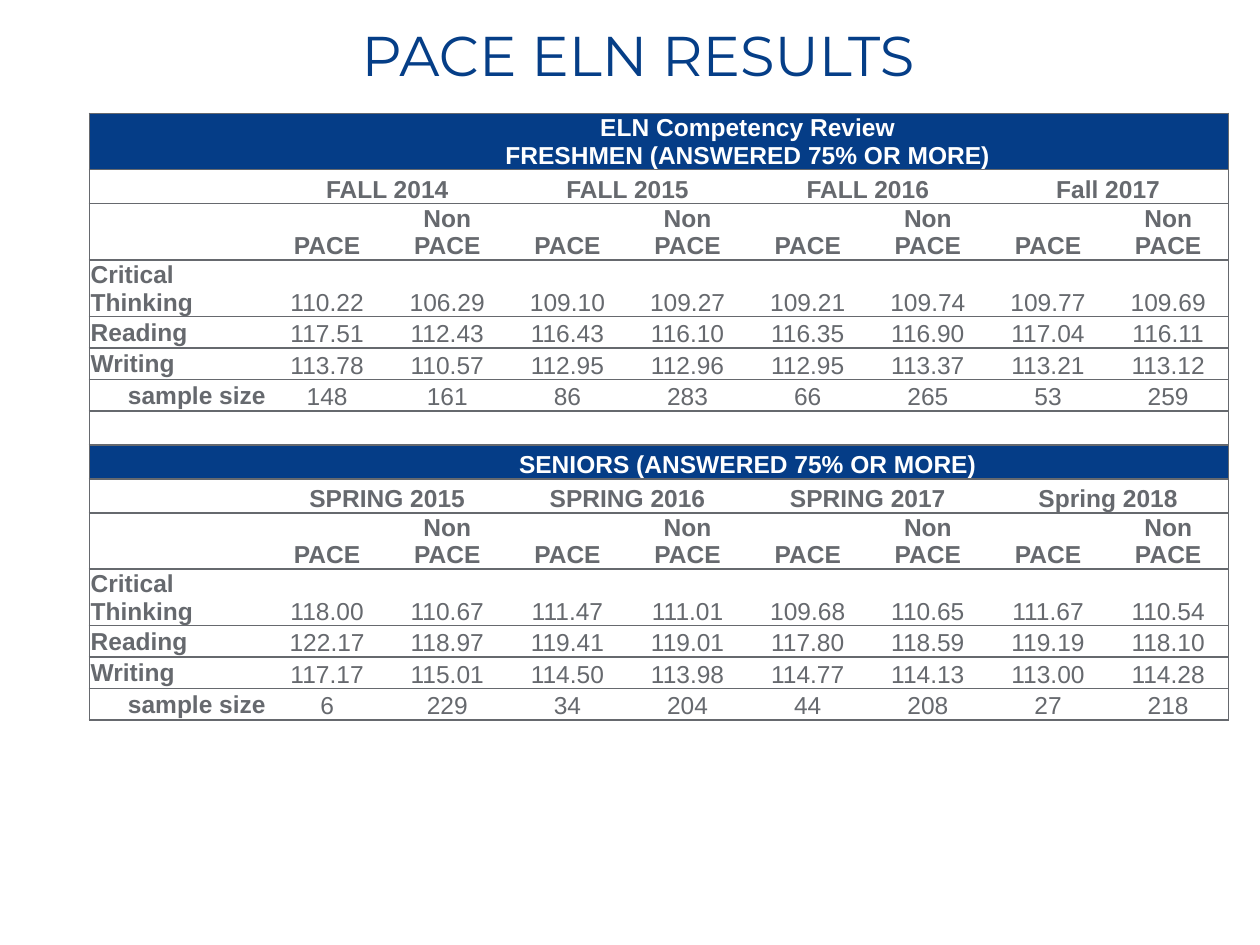
from dataclasses import dataclass
from typing import Optional

from lxml.etree import SubElement
from pptx import Presentation
from pptx.dml.color import RGBColor
from pptx.enum.text import MSO_ANCHOR as Anchor, PP_ALIGN as Align
from pptx.oxml.ns import qn
from pptx.util import Inches, Pt

NAVY = RGBColor(0x05, 0x3D, 0x87)
TITLE_BLUE = RGBColor(0x05, 0x3E, 0x87)
GREY = RGBColor(0x66, 0x69, 0x6E)
WHITE = RGBColor(0xFF, 0xFF, 0xFF)

LEFT, TOP, WIDTH, HEIGHT = 0.71, 0.9, 9.04, 4.94
LABEL_WIDTH = 1.41
VALUE_COLUMNS = 8
COLUMNS = VALUE_COLUMNS + 1
HEADER_HEIGHT, SCORE_HEIGHT = 0.27, 0.25
TEXT_SIZE = Pt(14)
MARGINS = {"margin_left": 0.01, "margin_right": 0.01, "margin_top": 0.01, "margin_bottom": 0}


@dataclass
class CellStyle:
    color: RGBColor = GREY
    fill: RGBColor = WHITE
    bold: bool = True
    align: Align = Align.CENTER
    anchor: Anchor = Anchor.BOTTOM


@dataclass
class Row:
    texts: list[str]
    style: CellStyle
    label: str = ""
    label_style: Optional[CellStyle] = None
    height: float = HEADER_HEIGHT


@dataclass
class Cohort:
    heading: str
    terms: list[str]
    scores: dict[str, str]


HEADING = CellStyle(color=WHITE, fill=NAVY)
SUBHEADING = CellStyle()
SCORE = CellStyle(bold=False)
SKILL = CellStyle(align=Align.LEFT, anchor=Anchor.MIDDLE)
SAMPLE = CellStyle(align=Align.RIGHT, anchor=Anchor.MIDDLE)

COHORTS = [
    Cohort(
        "ELN Competency Review\nFRESHMEN (ANSWERED 75% OR MORE)",
        ["FALL 2014", "FALL 2015", "FALL 2016", "Fall 2017"],
        {
            "Critical Thinking": "110.22 106.29 109.10 109.27 109.21 109.74 109.77 109.69",
            "Reading": "117.51 112.43 116.43 116.10 116.35 116.90 117.04 116.11",
            "Writing": "113.78 110.57 112.95 112.96 112.95 113.37 113.21 113.12",
            "sample size": "148 161 86 283 66 265 53 259",
        },
    ),
    Cohort(
        "SENIORS (ANSWERED 75% OR MORE)",
        ["SPRING 2015", "SPRING 2016", "SPRING 2017", "Spring 2018"],
        {
            "Critical Thinking": "118.00 110.67 111.47 111.01 109.68 110.65 111.67 110.54",
            "Reading": "122.17 118.97 119.41 119.01 117.80 118.59 119.19 118.10",
            "Writing": "117.17 115.01 114.50 113.98 114.77 114.13 113.00 114.28",
            "sample size": "6 229 34 204 44 208 27 218",
        },
    ),
]


def cohort_rows(cohort: Cohort) -> list[Row]:
    rows = [
        Row([cohort.heading], HEADING),
        Row(cohort.terms, SUBHEADING),
        Row(["PACE", "Non PACE"] * len(cohort.terms), SUBHEADING),
    ]
    for label, scores in cohort.scores.items():
        label_style = SAMPLE if label == "sample size" else SKILL
        rows.append(Row(scores.split(), SCORE, label, label_style, SCORE_HEIGHT))
    return rows


def set_borders(cell, visible: dict[str, bool]) -> None:
    properties = cell._tc.get_or_add_tcPr()
    for side, shown in visible.items():
        line = SubElement(properties, qn(f"a:ln{side}"), w=str(Pt(1)))
        if shown:
            fill = SubElement(line, qn("a:solidFill"))
            SubElement(fill, qn("a:srgbClr"), val=str(GREY))
        else:
            SubElement(line, qn("a:noFill"))


def format_cell(cell, column: int, width: int, style: CellStyle, text: str = "") -> None:
    set_borders(cell, {"L": column == 0, "R": column + width == COLUMNS, "T": True, "B": True})
    cell.fill.solid()
    cell.fill.fore_color.rgb = style.fill
    cell.vertical_anchor = style.anchor
    for name, inches in MARGINS.items():
        setattr(cell, name, Inches(inches))
    cell.text = text
    for para in cell.text_frame.paragraphs:
        para.alignment = style.align
        for span in para.runs:
            for name, value in {"name": "Arial", "size": TEXT_SIZE, "bold": style.bold}.items():
                setattr(span.font, name, value)
            span.font.color.rgb = style.color
        if not para.runs:  # keeps empty cells from stretching their row
            SubElement(para._p, qn("a:endParaRPr"), sz=str(int(TEXT_SIZE.pt * 100)))


def fill_row(table, index: int, row: Row) -> None:
    table.rows[index].height = Inches(row.height)
    format_cell(table.cell(index, 0), 0, 1, row.label_style or row.style, row.label)
    width = VALUE_COLUMNS // len(row.texts)
    for position, text in enumerate(row.texts):
        first = 1 + position * width
        cell = table.cell(index, first)
        format_cell(cell, first, width, row.style, text)
        for column in range(first + 1, first + width):
            format_cell(table.cell(index, column), column, 1, row.style)
        if width > 1:
            cell.merge(table.cell(index, first + width - 1))


def add_results(page, rows: list[Row]) -> None:
    frame = page.shapes.add_table(
        len(rows), COLUMNS, Inches(LEFT), Inches(TOP), Inches(WIDTH), Inches(HEIGHT)
    )
    table = frame.table
    table.first_row = table.horz_banding = False
    value_width = (WIDTH - LABEL_WIDTH) / VALUE_COLUMNS
    for index, column in enumerate(table.columns):
        column.width = Inches(value_width if index else LABEL_WIDTH)
    for index, row in enumerate(rows):
        fill_row(table, index, row)
    frame.height = Inches(HEIGHT)


def add_title(page, text: str) -> None:
    box = page.shapes.add_textbox(Inches(LEFT), Inches(0.17), Inches(8.71), Inches(1.19))
    box.text_frame.word_wrap = True
    para = box.text_frame.paragraphs[0]
    para.alignment = Align.CENTER
    para.line_spacing = 0.9
    span = para.add_run()
    span.text = text
    for name, value in {"name": "Montserrat", "size": Pt(32)}.items():
        setattr(span.font, name, value)
    span.font.color.rgb = TITLE_BLUE


def main() -> None:
    deck = Presentation()
    deck.slide_width, deck.slide_height = Inches(10), Inches(7.5)
    page = deck.slides.add_slide(deck.slide_layouts[6])

    # Results table: two cohorts with an empty row between them
    freshmen, seniors = map(cohort_rows, COHORTS)
    spacer = Row([""] * VALUE_COLUMNS, SCORE)
    add_results(page, [*freshmen, spacer, *seniors])

    # Title
    add_title(page, "PACE ELN RESULTS")
    deck.save("out.pptx")


if __name__ == "__main__":
    main()
